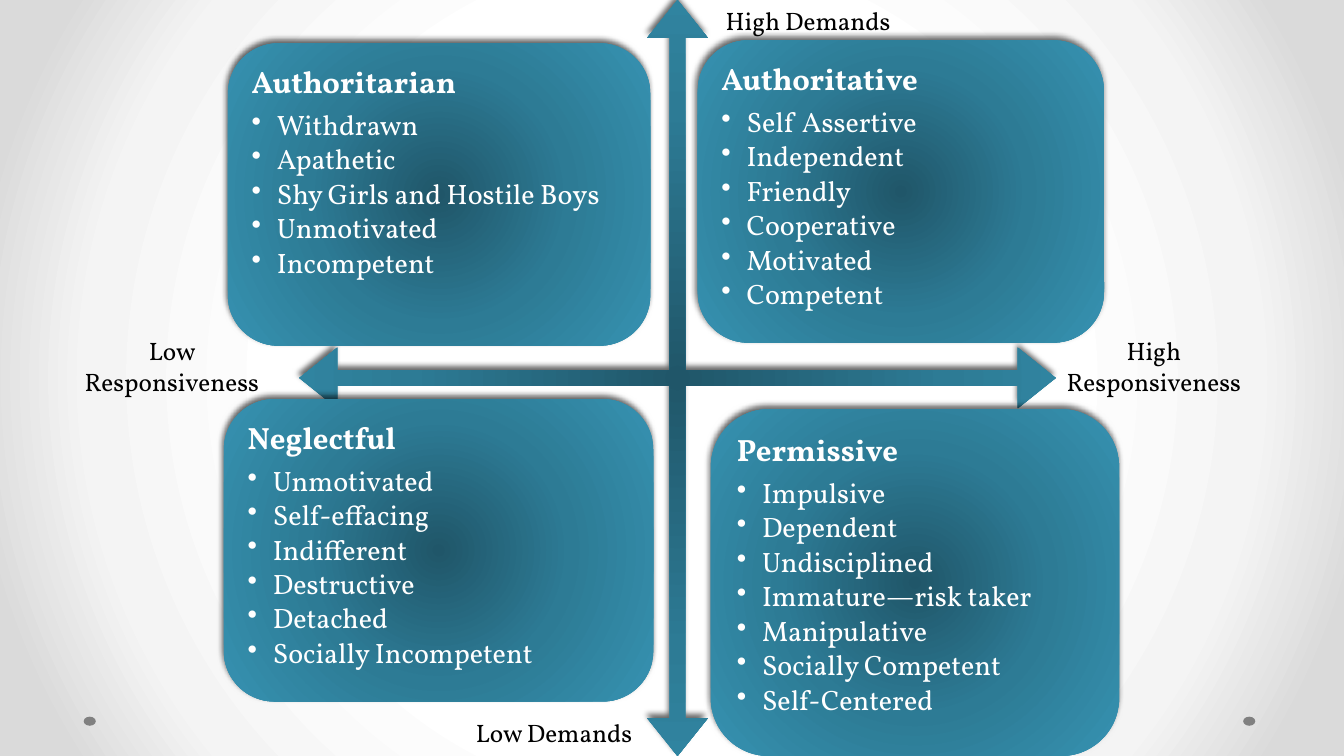
from dataclasses import dataclass

from lxml.etree import SubElement
from pptx import Presentation
from pptx.dml.color import RGBColor
from pptx.enum.shapes import MSO_SHAPE as Preset
from pptx.enum.text import MSO_ANCHOR as Anchor, PP_ALIGN as Align
from pptx.oxml.ns import qn
from pptx.util import Inches, Pt


@dataclass(frozen=True)
class Theme:
    font: str = "Vollkorn"
    heading: int = 22
    trait: int = 20
    label: int = 18
    light: str = "FFFFFF"
    dark: str = "000000"
    dot: str = "808080"
    teal: tuple = ((0, "205669"), (50, "2D7B95"), (100, "3692B1"))
    backdrop: tuple = ((50, "FFFFFF"), (76, "F4F4F4"), (92, "DADADA"))


THEME = Theme()

STYLES = [
    ("Authoritarian", (2.26, 0.43, 4.19, 3),
     ["Withdrawn", "Apathetic", "Shy Girls and Hostile Boys", "Unmotivated", "Incompetent"]),
    ("Authoritative", (6.92, 0.4, 4.03, 3),
     ["Self Assertive", "Independent", "Friendly", "Cooperative", "Motivated", "Competent"]),
    ("Neglectful", (2.22, 3.96, 4.26, 3),
     ["Unmotivated", "Self-effacing", "Indifferent", "Destructive", "Detached",
      "Socially Incompetent"]),
    ("Permissive", (7.05, 4.06, 4.05, 3.44),
     ["Impulsive", "Dependent", "Undisciplined", "Immature—risk taker", "Manipulative",
      "Socially Competent", "Self-Centered"]),
]

AXIS_LABELS = [
    ("High Responsiveness", (10.38, 3.28, 2.13, 0.71)),
    ("Low Responsiveness", (0.64, 3.28, 2.13, 0.71)),
    ("High Demands", (6.95, 0, 2.13, 0.4)),
    ("Low Demands", (4.43, 7.07, 2.13, 0.4)),
]


def add_node(parent, tag, **attributes):
    return SubElement(parent, qn(tag), {key: str(value) for key, value in attributes.items()})


def radial_fill(fill, element, stops):
    """Fill with a circular gradient that runs outward from the centre."""
    fill.gradient()
    gradient = element.find(".//" + qn("a:gradFill"))
    for child in list(gradient):
        gradient.remove(child)
    stop_list = add_node(gradient, "a:gsLst")
    for position, color in stops:
        stop = add_node(stop_list, "a:gs", pos=position * 1000)
        add_node(stop, "a:srgbClr", val=color)
    circle = add_node(gradient, "a:path", path="circle")
    add_node(circle, "a:fillToRect", l=50000, t=50000, r=50000, b=50000)


def add_shadow(shape, blur, distance):
    effects = shape.element.spPr.find(qn("a:effectLst"))
    shadow = add_node(effects, "a:outerShdw", blurRad=Pt(blur), dist=Pt(distance),
                      dir=245 * 60000, algn="ctr", rotWithShape=0)
    color = add_node(shadow, "a:srgbClr", val=THEME.dark)
    add_node(color, "a:alpha", val=60000)


def add_plain_shape(page, preset, box):
    shape = page.shapes.add_shape(preset, *map(Inches, box))
    shape.shadow.inherit = False
    shape.line.fill.background()
    return shape


def write_text(para, text, size, color, bold=False, align=Align.LEFT,
               line_spacing=None, after=None, bullet=False):
    """Write one paragraph; after is its following space in percent of a line."""
    para.alignment = align
    para.line_spacing = line_spacing
    properties = para._p.get_or_add_pPr()
    if after:
        add_node(add_node(properties, "a:spcAft"), "a:spcPct", val=after * 1000)
    if bullet:
        properties.set("marL", str(Inches(0.25)))
        properties.set("indent", str(Inches(-0.25)))
        add_node(properties, "a:buChar", char="•")
    span = para.add_run()
    span.text = text
    span.font.name = THEME.font
    span.font.size = Pt(size)
    span.font.bold = bold
    span.font.color.rgb = RGBColor.from_string(color)


def add_backdrop(page):
    radial_fill(page.background.fill, page.element, THEME.backdrop)
    for left in (12.33, 0.83):
        dot = add_plain_shape(page, Preset.OVAL, (left, 7.11, 0.12, 0.09))
        dot.fill.solid()
        dot.fill.fore_color.rgb = RGBColor.from_string(THEME.dot)


def add_axes(page, box):
    axes = add_plain_shape(page, Preset.QUAD_ARROW, box)
    for index, value in enumerate((0.02, 0.04, 0.05)):
        axes.adjustments[index] = value
    radial_fill(axes.fill, axes.element, THEME.teal)
    add_shadow(axes, blur=4, distance=3)


def add_style_card(page, box, heading, traits):
    card = add_plain_shape(page, Preset.ROUNDED_RECTANGLE, box)
    radial_fill(card.fill, card.element, THEME.teal)
    add_shadow(card, blur=4.2, distance=3.2)
    frame = card.text_frame
    frame.word_wrap = True
    frame.vertical_anchor = Anchor.TOP
    frame.margin_left = frame.margin_right = Inches(0.09)
    frame.margin_top = frame.margin_bottom = Inches(0.09)
    write_text(frame.paragraphs[0], heading, THEME.heading, THEME.light, bold=True,
               line_spacing=0.9, after=35)
    for trait in traits:
        write_text(frame.add_paragraph(), trait, THEME.trait, THEME.light,
                   line_spacing=0.9, after=15, bullet=True)


def add_axis_label(page, box, text):
    frame = page.shapes.add_textbox(*map(Inches, box)).text_frame
    frame.word_wrap = True
    write_text(frame.paragraphs[0], text, THEME.label, THEME.dark, align=Align.CENTER)


def main():
    deck = Presentation()
    deck.slide_width, deck.slide_height = Inches(13.33), Inches(7.5)
    page = deck.slides.add_slide(deck.slide_layouts[6])
    add_backdrop(page)
    add_axes(page, (2.97, 0, 7.5, 7.5))
    for heading, box, traits in STYLES:
        add_style_card(page, box, heading, traits)
    for text, box in AXIS_LABELS:
        add_axis_label(page, box, text)
    deck.save("out.pptx")


if __name__ == "__main__":
    main()
